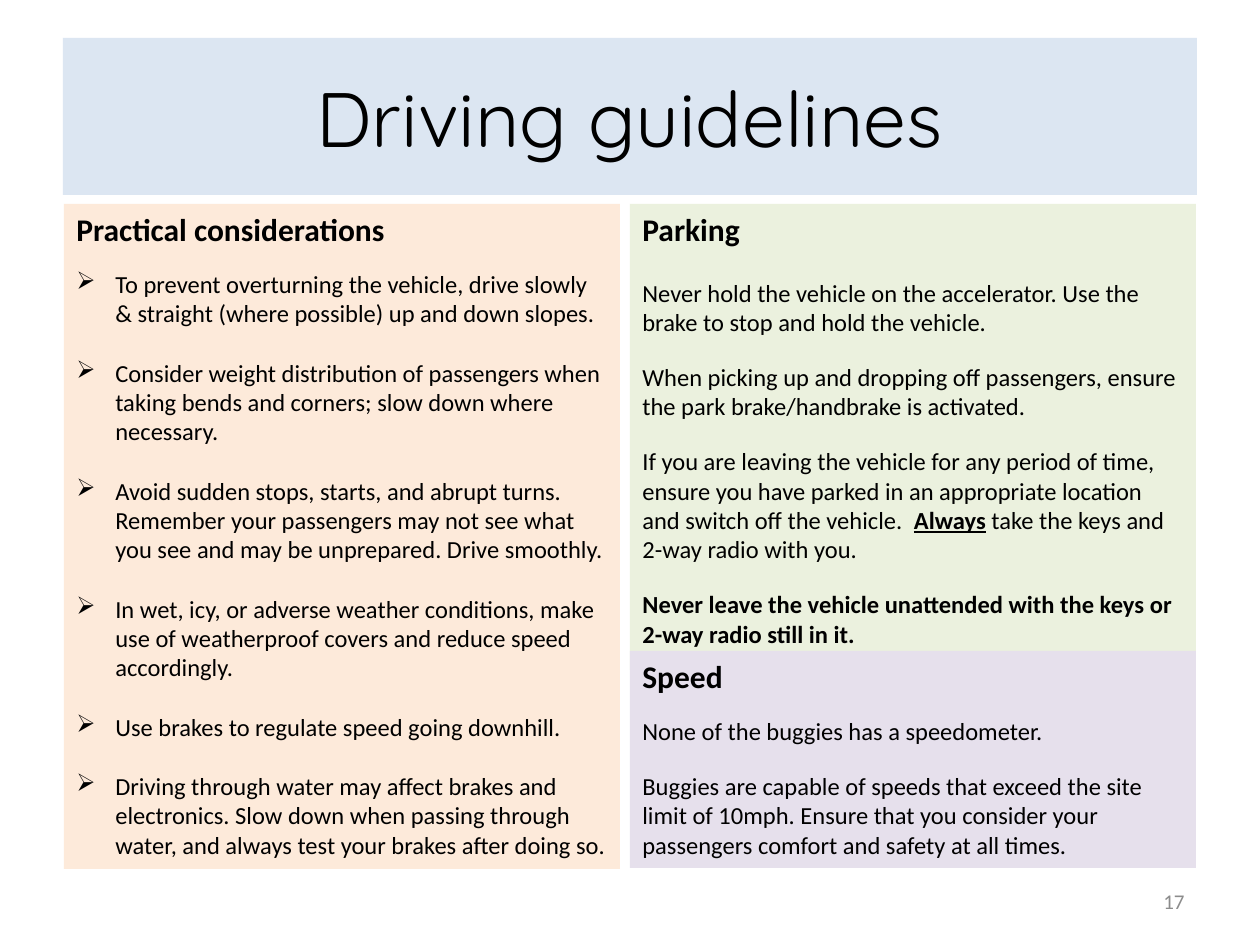
import pptx
import pptx.util
import pptx.dml.color
import pptx.enum.shapes
import pptx.enum.text
import pptx.oxml.ns
import lxml.etree

EMU_PER_PX = 914400 // 126
COLORS = {
    "title": "DCE6F2",
    "practical": "FDEADA",
    "parking": "EBF1DE",
    "speed": "E6E0EC",
    "text": "000000",
    "number": "8C8C8C",
}
BULLET_INDENT = 39
ALIGN = pptx.enum.text.PP_ALIGN
ANCHOR = pptx.enum.text.MSO_ANCHOR

PRACTICAL = [
    "To prevent overturning the vehicle, drive slowly & straight (where possible) up and down slopes.",
    "Consider weight distribution of passengers when taking bends and corners; slow down where necessary.",
    "Avoid sudden stops, starts, and abrupt turns. Remember your passengers may not see what "
    "you see and may be unprepared. Drive smoothly.",
    "In wet, icy, or adverse weather conditions, make use of weatherproof covers and reduce speed accordingly.",
    "Use brakes to regulate speed going downhill.",
    "Driving through water may affect brakes and electronics. Slow down when passing through "
    "water, and always test your brakes after doing so.",
]
PARKING = [
    "Never hold the vehicle on the accelerator. Use the brake to stop and hold the vehicle.",
    "When picking up and dropping off passengers, ensure the park brake/handbrake is activated.",
    "If you are leaving the vehicle for any period of time, ensure you have parked in an "
    "appropriate location and switch off the vehicle.  *Always* take the keys and 2-way radio with you.",
    "Never leave the vehicle unattended with the keys or 2-way radio still in it.",
]
SPEED = [
    "None of the buggies has a speedometer.",
    "Buggies are capable of speeds that exceed the site limit of 10mph. Ensure that you "
    "consider your passengers comfort and safety at all times.",
]


def px(length):
    return pptx.util.Emu(length * EMU_PER_PX)


def rgb(name):
    return pptx.dml.color.RGBColor.from_string(COLORS[name])


def add_box(slide, bounds, fill, anchor=ANCHOR.TOP):
    shape = slide.shapes.add_shape(
        pptx.enum.shapes.MSO_SHAPE.RECTANGLE, *map(px, bounds))
    shape.shadow.inherit = False
    shape.fill.solid()
    shape.fill.fore_color.rgb = rgb(fill)
    shape.line.fill.background()
    shape.text_frame.word_wrap = True
    shape.text_frame.vertical_anchor = anchor
    return shape


def style(paragraph, size, color="text", font="Calibri", bold=False, align=ALIGN.LEFT):
    paragraph.alignment = align
    paragraph.font.size = pptx.util.Pt(size)
    paragraph.font.name = font
    paragraph.font.bold = bold
    paragraph.font.color.rgb = rgb(color)


def add_bullet(paragraph):
    properties = paragraph._p.get_or_add_pPr()
    properties.set("marL", str(px(BULLET_INDENT)))
    properties.set("indent", str(-px(BULLET_INDENT)))
    bullet = lxml.etree.Element(pptx.oxml.ns.qn("a:buChar"), char="➢")
    properties.insert_element_before(bullet, "a:tabLst", "a:defRPr", "a:extLst")


def write_marked(paragraph, text):
    """Write text, with parts between asterisks bold and underlined."""
    for index, part in enumerate(text.split("*")):
        run = paragraph.add_run()
        run.text = part
        if index % 2:
            run.font.bold = True
            run.font.underline = True


def add_panel(slide, bounds, fill, heading, items, first_gap, gap, bulleted=False):
    """Add a heading and its items; the gaps are in points."""
    frame = add_box(slide, bounds, fill).text_frame
    title = frame.paragraphs[0]
    title.text = heading
    style(title, 18, bold=True)
    paragraphs = []
    for index, item in enumerate(items):
        paragraph = frame.add_paragraph()
        write_marked(paragraph, item)
        style(paragraph, 14)
        paragraph.space_before = pptx.util.Pt(gap if index else first_gap)
        if bulleted:
            add_bullet(paragraph)
        paragraphs.append(paragraph)
    return paragraphs


def add_title(slide, text):
    shape = add_box(slide, (63, 38, 1134, 157), "title", ANCHOR.MIDDLE)
    paragraph = shape.text_frame.paragraphs[0]
    paragraph.text = text
    style(paragraph, 44, font="Quicksand", align=ALIGN.CENTER)


def add_page_number(slide, number):
    frame = slide.shapes.add_textbox(*map(px, (903, 876, 294, 50))).text_frame
    frame.word_wrap = True
    frame.vertical_anchor = ANCHOR.MIDDLE
    paragraph = frame.paragraphs[0]
    paragraph.text = str(number)
    style(paragraph, 12, "number", align=ALIGN.RIGHT)


def main():
    presentation = pptx.Presentation()
    presentation.slide_width = px(1260)
    presentation.slide_height = px(945)
    slide = presentation.slides.add_slide(presentation.slide_layouts[6])

    add_title(slide, "Driving guidelines")
    add_panel(slide, (64, 204, 556, 665), "practical", "Practical considerations",
              PRACTICAL, 12, 17, bulleted=True)
    parking = add_panel(slide, (630, 204, 566, 466), "parking", "Parking", PARKING, 17, 14.5)
    parking[-1].font.bold = True
    add_panel(slide, (630, 651, 566, 217), "speed", "Speed", SPEED, 12, 14.5)
    add_page_number(slide, 17)
    presentation.save("out.pptx")


if __name__ == "__main__":
    main()
